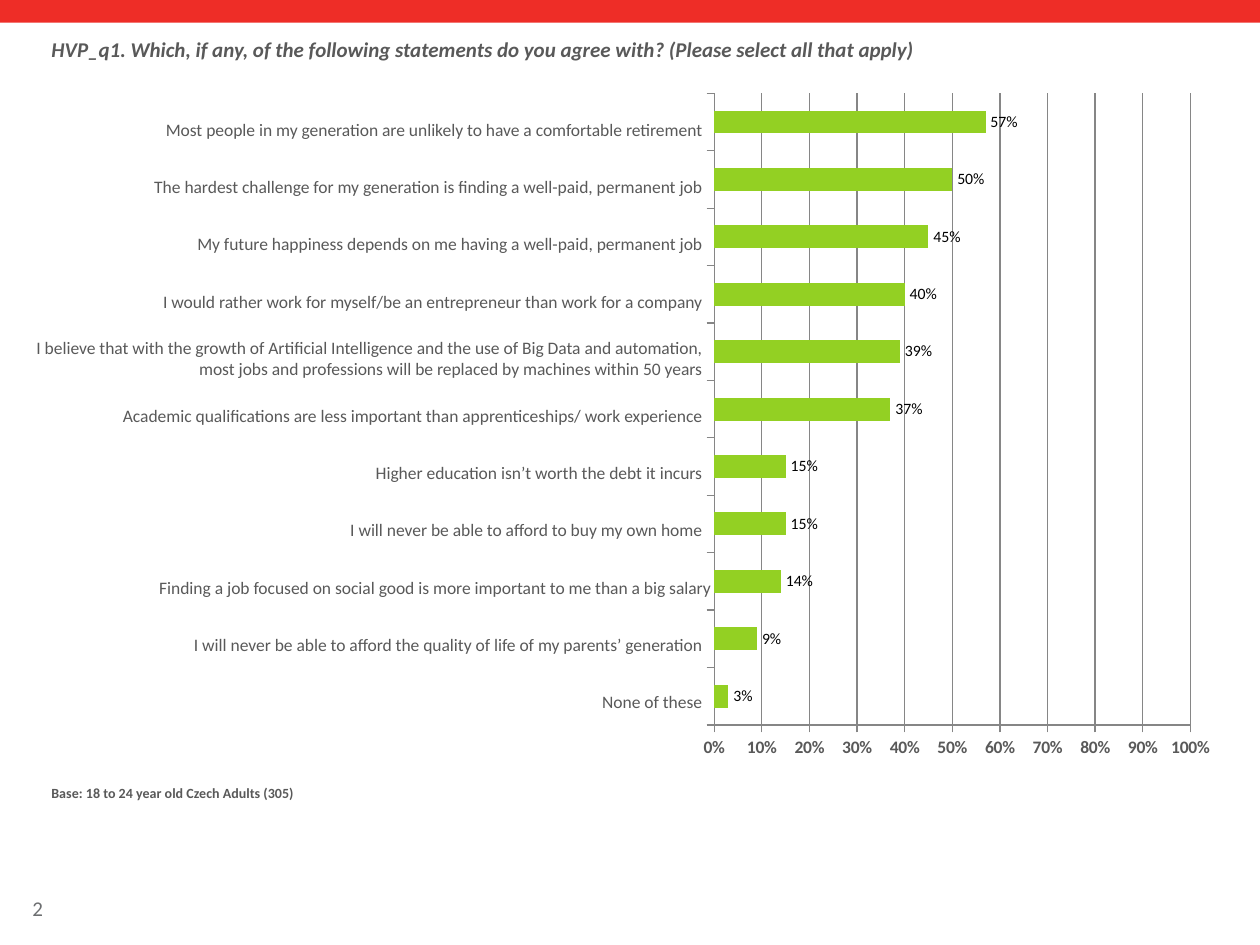
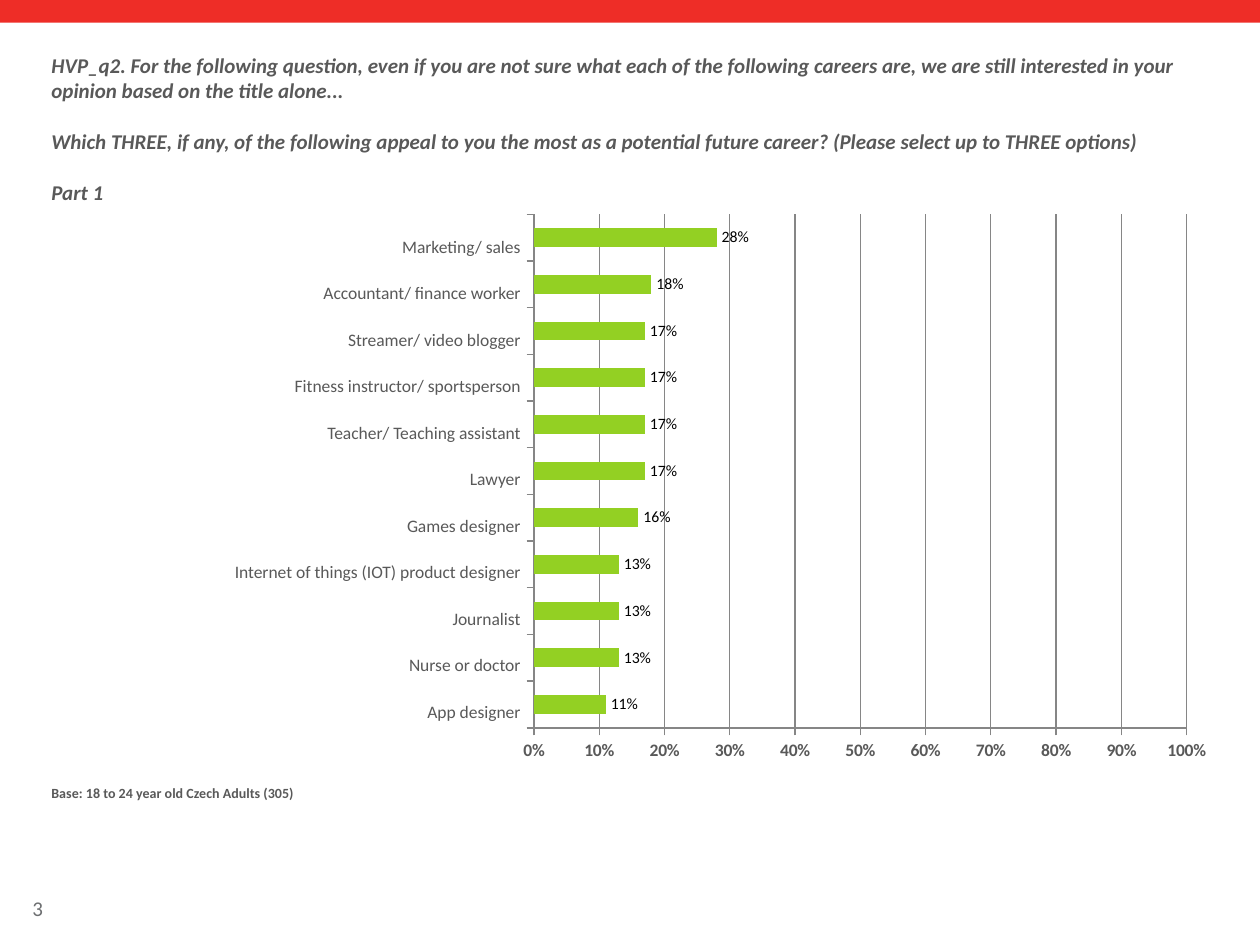
"""Build two survey slides, each a bar chart of answers with a question and a base note."""
from dataclasses import dataclass

from lxml import etree
from pptx import Presentation
from pptx import util as u
from pptx.chart import data as chart_data
from pptx.dml import color
from pptx.enum import chart as ch, shapes, text

Pt = u.Pt


@dataclass(frozen=True)
class Theme:
    """Colours, fonts and type sizes shared by the slides."""
    band: str = "EE2D27"
    ink: str = "595959"
    muted: str = "6D6F71"
    bar: str = "93D023"
    rule: str = "868686"
    value: str = "000000"
    face: str = "Calibri"
    chart_face: str = "Manrope"
    question_size: int = 12
    answer_size: int = 10
    value_size: int = 9
    base_size: int = 8
    chart_size: int = 18


@dataclass(frozen=True)
class Answer:
    """One answer with its share, its line count and its shift to the right."""
    label: str
    share: float
    lines: int = 1
    shift: float = 0


@dataclass(frozen=True)
class Column:
    """The column of answer labels beside a chart."""
    left: float
    width: float
    height: float
    first_centre: float
    pitch: float


THEME = Theme()
SLIDE_W, SLIDE_H = 720, 540
ANSWER_LINE = 12.2
BASE = "Base: 18 to 24 year old Czech Adults (305)"

OPINIONS = [
    Answer("Most people in my generation are unlikely to have a comfortable retirement", 0.57),
    Answer("The hardest challenge for my generation is finding a well-paid, permanent job", 0.5),
    Answer("My future happiness depends on me having a well-paid, permanent job", 0.45),
    Answer("I would rather work for myself/be an entrepreneur than work for a company", 0.4),
    Answer("I believe that with the growth of Artificial Intelligence and the use of Big Data "
           "and automation, most jobs and professions will be replaced by machines within 50 years",
           0.39, lines=2),
    Answer("Academic qualifications are less important than apprenticeships/ work experience", 0.37),
    Answer("Higher education isn’t worth the debt it incurs", 0.15),
    Answer("I will never be able to afford to buy my own home", 0.15),
    Answer("Finding a job focused on social good is more important to me than a big salary",
           0.14, shift=5),
    Answer("I will never be able to afford the quality of life of my parents’ generation", 0.09),
    Answer("None of these", 0.03),
]

CAREERS = [
    Answer("Marketing/ sales", 0.28),
    Answer("Accountant/ finance worker", 0.18),
    Answer("Streamer/ video blogger", 0.17),
    Answer("Fitness instructor/ sportsperson", 0.17),
    Answer("Teacher/ Teaching assistant", 0.17),
    Answer("Lawyer", 0.17),
    Answer("Games designer", 0.16),
    Answer("Internet of things (IOT) product designer", 0.13),
    Answer("Journalist", 0.13),
    Answer("Nurse or doctor", 0.13),
    Answer("App designer", 0.11),
]


def rgb(code):
    """Turn a hex code into a colour."""
    return color.RGBColor.from_string(code)


def style_font(font, size, ink, face=THEME.face, bold=False, italic=False):
    """Apply a type style to a font."""
    font.size, font.name, font.bold, font.italic = Pt(size), face, bold, italic
    font.color.rgb = rgb(ink)


def add_text(slide, paragraphs, box, size, ink=THEME.ink, bold=False, italic=False,
             align=text.PP_ALIGN.LEFT, anchor=text.MSO_ANCHOR.TOP, gap=0):
    """Write paragraphs into a wrapping text box."""
    frame = slide.shapes.add_textbox(*map(Pt, box)).text_frame
    frame.word_wrap = True
    frame.vertical_anchor = anchor
    for index, wording in enumerate(paragraphs):
        paragraph = frame.add_paragraph() if index else frame.paragraphs[0]
        paragraph.alignment = align
        if index and gap:
            paragraph.space_before = Pt(gap)
        run = paragraph.add_run()
        run.text = wording
        style_font(run.font, size, ink, bold=bold, italic=italic)


def add_band(slide):
    """Draw the band along the top edge."""
    band = slide.shapes.add_shape(shapes.MSO_SHAPE.RECTANGLE, 0, 0, Pt(SLIDE_W), Pt(13))
    band.shadow.inherit = False
    band.fill.solid()
    band.fill.fore_color.rgb = rgb(THEME.band)
    band.line.fill.background()


def place_plot(chart, fractions):
    """Fix the inner plot area as fractions of the chart."""
    plot_area = chart._chartSpace.chart.plotArea
    ns = etree.QName(plot_area).namespace
    for old in plot_area.findall(f"{{{ns}}}layout"):
        plot_area.remove(old)
    layout = etree.Element(f"{{{ns}}}layout")
    manual = etree.SubElement(layout, f"{{{ns}}}manualLayout")
    settings = [("layoutTarget", "inner"), ("xMode", "edge"), ("yMode", "edge"),
                *zip("xywh", fractions)]
    for tag, value in settings:
        etree.SubElement(manual, f"{{{ns}}}{tag}").set("val", str(value))
    plot_area.insert(0, layout)


def style_axes(chart):
    """Format the unlabelled answer axis and the percentage axis."""
    answers, shares = chart.category_axis, chart.value_axis
    for axis in (answers, shares):
        axis.major_tick_mark = ch.XL_TICK_MARK.OUTSIDE
        axis.minor_tick_mark = ch.XL_TICK_MARK.NONE
        axis.format.line.color.rgb = rgb(THEME.rule)
        axis.format.line.width = Pt(0.75)
        style_font(axis.tick_labels.font, THEME.answer_size, THEME.ink, bold=axis is shares)
    answers.tick_label_position = ch.XL_TICK_LABEL_POSITION.NONE
    answers.has_major_gridlines = False
    shares.tick_label_position = ch.XL_TICK_LABEL_POSITION.LOW
    shares.minimum_scale, shares.maximum_scale, shares.major_unit = 0, 1, 0.1
    shares.tick_labels.number_format = "0%"
    shares.tick_labels.number_format_is_linked = False
    shares.has_major_gridlines = True
    shares.major_gridlines.format.line.color.rgb = rgb(THEME.rule)
    shares.major_gridlines.format.line.width = Pt(0.75)


def add_share_chart(slide, answers, box, plot_fractions):
    """Chart the share of each answer, the first answer on top."""
    shares = chart_data.CategoryChartData(number_format="0%")
    shares.categories = [str(n + 1) for n in range(len(answers))]
    shares.add_series("Series 1", [answer.share for answer in reversed(answers)])
    chart = slide.shapes.add_chart(ch.XL_CHART_TYPE.BAR_CLUSTERED, *map(Pt, box), shares).chart
    chart.has_legend = chart.has_title = False
    style_font(chart.font, THEME.chart_size, THEME.muted, THEME.chart_face)
    style_axes(chart)
    place_plot(chart, plot_fractions)
    plot = chart.plots[0]
    plot.gap_width, plot.overlap, plot.vary_by_categories = 150, -10, False
    bars = plot.series[0]
    bars.invert_if_negative = False
    bars.format.fill.solid()
    bars.format.fill.fore_color.rgb = rgb(THEME.bar)
    plot.has_data_labels = True
    labels = plot.data_labels
    labels.show_value = True
    labels.position = ch.XL_LABEL_POSITION.OUTSIDE_END
    labels.number_format, labels.number_format_is_linked = "0%", False
    style_font(labels.font, THEME.value_size, THEME.value)


def add_answer_labels(slide, answers, column):
    """Write the answers down a column at an even pitch."""
    for row, answer in enumerate(answers):
        height = column.height + (answer.lines - 1) * ANSWER_LINE
        top = column.first_centre + row * column.pitch - height / 2
        add_text(slide, [answer.label], (column.left + answer.shift, top, column.width, height),
                 THEME.answer_size, align=text.PP_ALIGN.RIGHT, anchor=text.MSO_ANCHOR.MIDDLE)


def add_survey_slide(deck, number, question, question_top, question_height, answers,
                     chart_box, plot_fractions, column):
    """Build one question slide with the shared band, number and base note."""
    slide = deck.slides.add_slide(deck.slide_layouts[6])
    add_band(slide)
    add_text(slide, [str(number)], (11.5, 508.3, 55.4, 21.6), THEME.question_size,
             ink=THEME.muted, anchor=text.MSO_ANCHOR.MIDDLE)
    add_text(slide, question, (22.3, question_top, 676, question_height), THEME.question_size,
             bold=True, italic=True, gap=14.6)
    add_share_chart(slide, answers, chart_box, plot_fractions)
    add_answer_labels(slide, answers, column)
    add_text(slide, [BASE], (22.3, 445, 676, 31), THEME.base_size, bold=True)


def main():
    """Build and save the deck."""
    deck = Presentation()
    deck.slide_width, deck.slide_height = Pt(SLIDE_W), Pt(SLIDE_H)
    add_survey_slide(
        deck, 2,
        ["HVP_q1. Which, if any, of the following statements do you agree with? "
         "(Please select all that apply)"],
        17.3, 36.7, OPINIONS, (396, 45.4, 302.4, 396.7), (0.04, 0.02, 0.9, 0.91),
        Column(left=10, width=398.2, height=19.4, first_centre=74, pitch=32.7))
    add_survey_slide(
        deck, 3,
        ["HVP_q2. For the following question, even if you are not sure what each of the "
         "following careers are, we are still interested in your opinion based on the title "
         "alone...",
         "Which THREE, if any, of the following appeal to you the most as a potential future "
         "career? (Please select up to THREE options)",
         "Part 1"],
        26.6, 90, CAREERS, (293, 115.9, 405.4, 326.2), (0.03, 0.02, 0.92, 0.9),
        Column(left=11.5, width=293, height=26.6, first_centre=140.8, pitch=26.57))
    deck.save("out.pptx")


if __name__ == "__main__":
    main()
